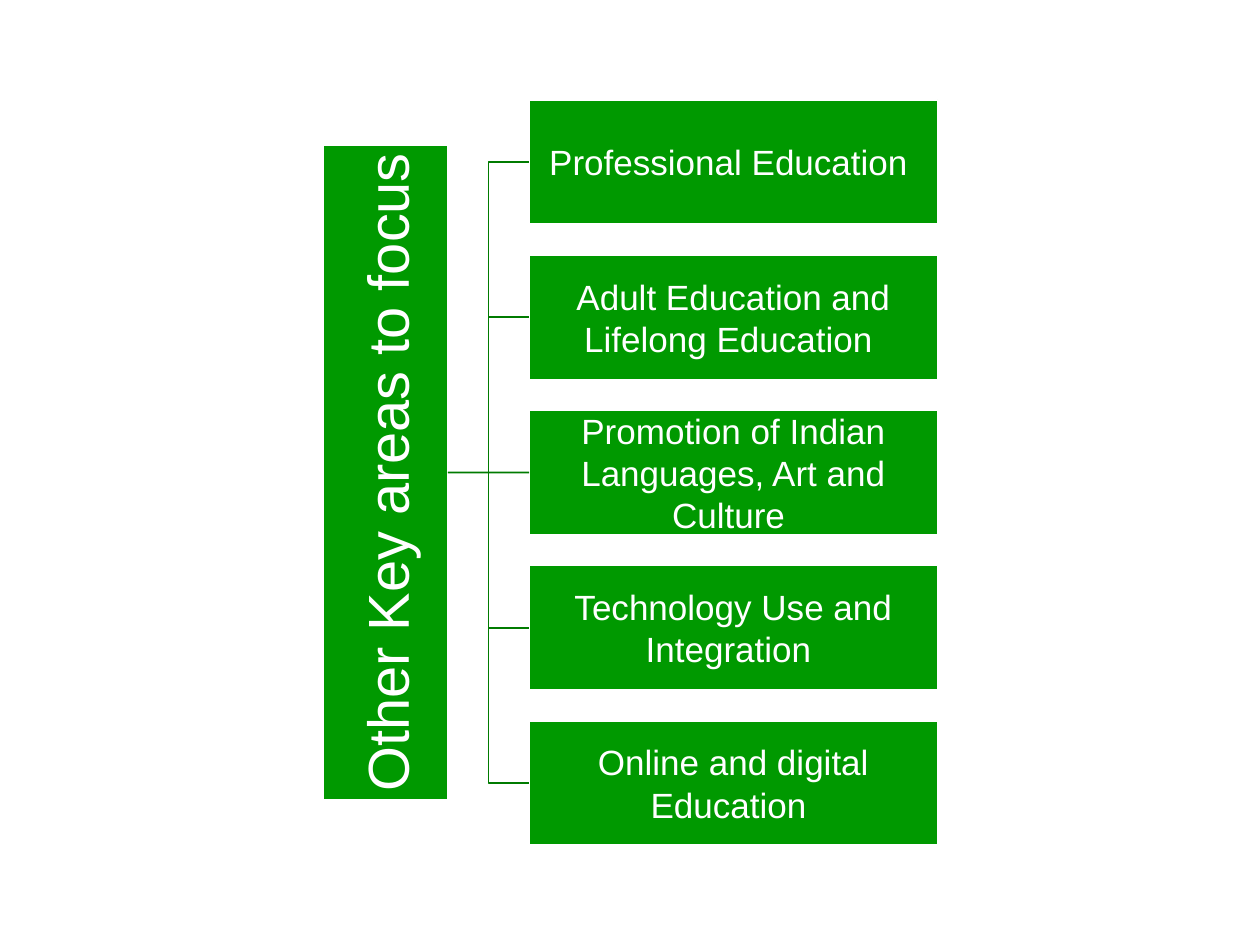
from dataclasses import dataclass

from lxml.etree import SubElement
from pptx import Presentation
from pptx.dml.color import RGBColor as RGB
from pptx.enum.shapes import MSO_CONNECTOR as LINK, MSO_SHAPE as SHAPE
from pptx.enum.text import MSO_ANCHOR as ANCHOR, PP_ALIGN as ALIGN
from pptx.oxml.ns import qn
from pptx.util import Cm, Pt


@dataclass(frozen=True)
class Theme:
    fill: RGB = RGB(0x00, 0x99, 0x00)
    link: RGB = RGB(0x00, 0x7B, 0x00)
    text: RGB = RGB(0xFF, 0xFF, 0xFF)
    font: str = "Arial"
    root: Pt = Pt(33)
    leaf: Pt = Pt(20)
    line: Pt = Pt(1)


THEME = Theme()
ROOT = "Other Key areas to focus"
# A closing space shifts each centred last line slightly to the left
AREAS = [
    "Professional Education ",
    "Adult Education and Lifelong Education ",
    "Promotion of Indian Languages, Art and Culture ",
    "Technology Use and Integration ",
    "Online and digital Education ",
]


def set_all(item, values):
    for name, value in values.items():
        setattr(item, name, value)


def add_box(slide, text, size, pad, left, top, width, height):
    """Filled box with centred text; lengths in cm."""
    box = slide.shapes.add_shape(
        SHAPE.RECTANGLE, Cm(left), Cm(top), Cm(width), Cm(height))
    box.shadow.inherit = False
    box.fill.solid()
    box.fill.fore_color.rgb = THEME.fill
    box.line.color.rgb = THEME.text
    box.line.width = THEME.line
    frame = box.text_frame
    sides = ("left", "top", "right", "bottom")
    set_all(frame, {f"margin_{side}": Cm(pad) for side in sides})
    set_all(frame, {"word_wrap": True, "vertical_anchor": ANCHOR.MIDDLE})
    para = frame.paragraphs[0]
    para.alignment = ALIGN.CENTER
    run = para.add_run()
    run.text = text
    set_all(run.font, {"name": THEME.font, "size": size})
    run.font.color.rgb = THEME.text
    return box


def add_link(slide, kind, start, end):
    """Line from the right side of one box to the left side of another."""
    link = slide.shapes.add_connector(kind, 0, 0, 0, 0)
    link.begin_connect(start, 3)
    link.end_connect(end, 1)
    link.line.color.rgb = THEME.link
    link.line.width = THEME.line
    SubElement(link._element.spPr, qn("a:effectLst"))


def add_tree(slide, left, top, width, height):
    """Upright root box on the left, one leaf box per area on the right."""
    thick, tall, wide = 2.51, 13.2, 8.23
    step = (height - thick) / (len(AREAS) - 1)

    # Root, with its text running upwards
    root = add_box(slide, ROOT, THEME.root, 0.05,
                   left, top + (height - tall) / 2, thick, tall)
    root.text_frame._txBody.bodyPr.set("vert", "vert270")

    # Leaves and their links
    for row, area in enumerate(AREAS):
        leaf = add_box(slide, area, THEME.leaf, 0.03,
                       left + width - wide, top + row * step, wide, thick)
        level = row == len(AREAS) // 2
        add_link(slide, LINK.STRAIGHT if level else LINK.ELBOW, root, leaf)


def main():
    deck = Presentation()
    deck.slide_width, deck.slide_height = Cm(25.4), Cm(19.05)
    slide = deck.slides.add_slide(deck.slide_layouts[6])
    add_tree(slide, 6.52, 2.01, 12.38, 15.03)
    deck.save("out.pptx")


if __name__ == "__main__":
    main()
